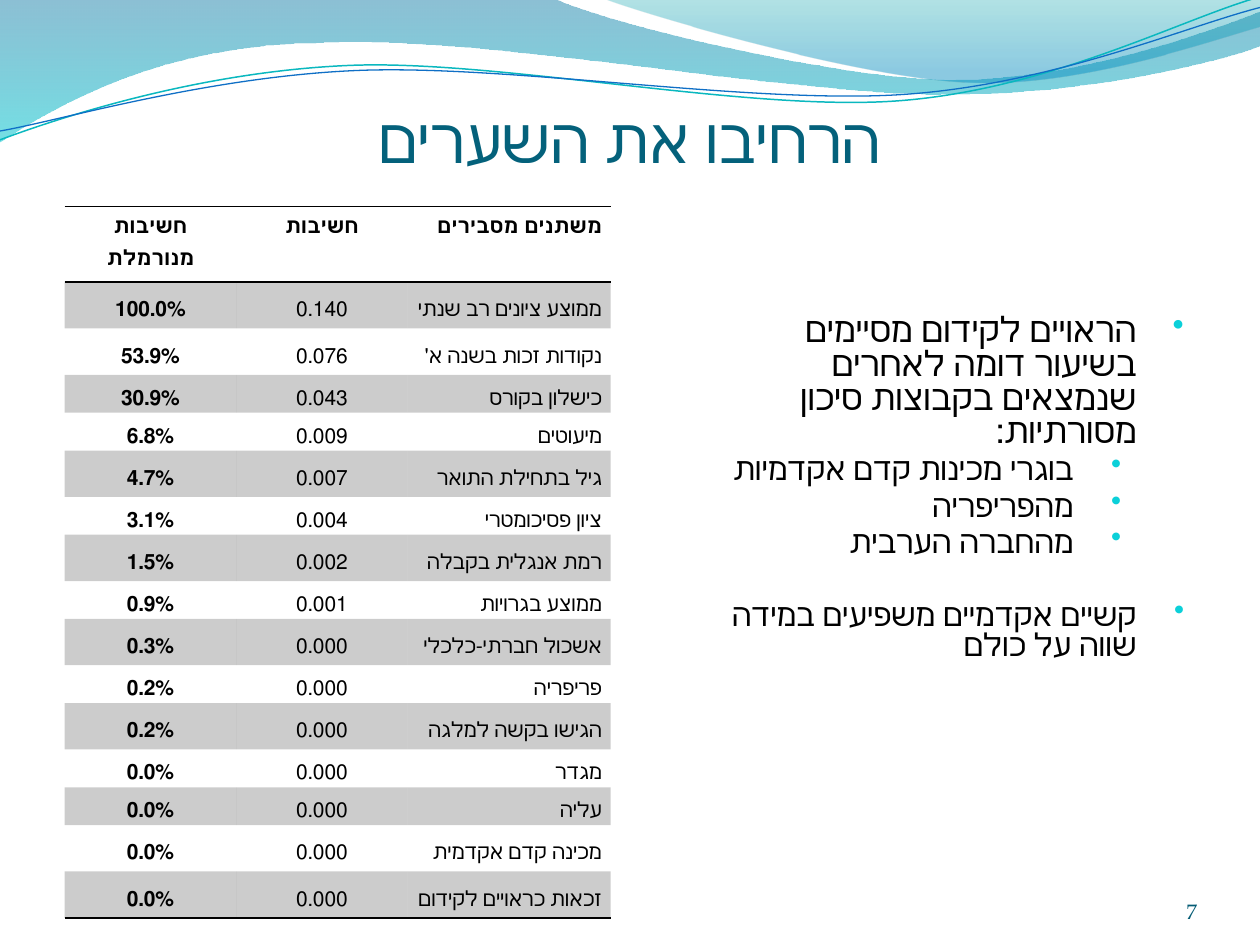
from dataclasses import dataclass
from math import cos, radians, sin

from lxml.etree import SubElement
from pptx import Presentation
from pptx.dml.color import RGBColor
from pptx.enum.lang import MSO_LANGUAGE_ID
from pptx.enum.text import MSO_ANCHOR, PP_ALIGN
from pptx.oxml.ns import qn
from pptx.util import Pt


@dataclass(frozen=True)
class Theme:
    """Colours, fonts and type sizes of the slide."""
    ink: str = "000000"
    title: str = "04617B"
    number: str = "045C75"
    bullet: str = "0BD0D9"
    teal_line: str = "0AB8BF"
    blue_line: str = "0F6FC6"
    body_font: str = "Arial"
    title_font: str = "Calibri"
    number_font: str = "TeX Gyre Pagella"
    title_size: int = 36
    lead_size: int = 20
    body_size: int = 18
    small_size: int = 12
    band_opacity: int = 20


THEME = Theme()
NO_STYLE = "{2D5ABB26-0587-4C30-8999-92F81FD0307C}"

BACK_WAVE = [
    [(0, -0.7)], [(316.8, -0.7)],
    [(342.7, 12.2), (478.1, 45.4), (545.8, 45.4)],
    [(614.2, 45.4), (689.8, 18.7), (720, 6.5)], [(720.7, 25.9)],
    [(707.8, 31.7), (626.4, 54.7), (537.1, 54)],
    [(447.8, 54), (275, 20.2), (185, 24.5)],
    [(92.2, 25.2), (33.1, 59.8), (-0.7, 81.4)],
]
FRONT_WAVE = [
    [(344.9, -0.7)],
    [(366.5, 7.9), (491, 44.6), (553.7, 46.8)],
    [(616.3, 49.7), (691.9, 23), (720, 15.1)], [(720, 0)],
]
TEAL_CURVE = [
    [(0, 79.9)],
    [(34.6, 67), (113.8, 41), (199.4, 37.4)],
    [(284.4, 33.8), (427, 64.1), (513.4, 57.6)],
    [(599.8, 51.1), (675.4, 10.8), (718.6, -1.4)],
]
BLUE_CURVE = [
    [(0, 74.9)],
    [(33.8, 69.1), (118.1, 43.9), (203.8, 40.3)],
    [(290.2, 36.7), (429.8, 59.8), (516.2, 54)],
    [(601.9, 48.2), (677.5, 15.1), (720, 4.3)],
]

HEADINGS = ("חשיבות מנורמלת", "חשיבות", "משתנים מסבירים")
TALL, SHORT = 26.5, 18
FACTORS = [
    ("100.0%", "0.140", "ממוצע ציונים רב שנתי", TALL),
    ("53.9%", "0.076", "נקודות זכות בשנה א'", TALL),
    ("30.9%", "0.043", "כישלון בקורס", SHORT),
    ("6.8%", "0.009", "מיעוטים", SHORT),
    ("4.7%", "0.007", "גיל בתחילת התואר", TALL),
    ("3.1%", "0.004", "ציון פסיכומטרי", SHORT),
    ("1.5%", "0.002", "רמת אנגלית בקבלה", TALL),
    ("0.9%", "0.001", "ממוצע בגרויות", SHORT),
    ("0.3%", "0.000", "אשכול חברתי-כלכלי", TALL),
    ("0.2%", "0.000", "פריפריה", SHORT),
    ("0.2%", "0.000", "הגישו בקשה למלגה", TALL),
    ("0.0%", "0.000", "מגדר", SHORT),
    ("0.0%", "0.000", "עליה", SHORT),
    ("0.0%", "0.000", "מכינה קדם אקדמית", TALL),
    ("0.0%", "0.000", "זכאות כראויים לקידום", TALL),
]
POINTS = [
    ("הראויים לקידום מסיימים בשיעור דומה לאחרים שנמצאים בקבוצות סיכון מסורתיות:",
     0, THEME.lead_size, 0),
    ("בוגרי מכינות קדם אקדמיות", 1, THEME.body_size, 3.5),
    ("מהפריפריה", 1, THEME.body_size, 3.5),
    ("מהחברה הערבית", 1, THEME.body_size, 3.5),
    ("קשיים אקדמיים משפיעים במידה שווה על כולם", 0, THEME.body_size, 24.5),
]


def rgb(value):
    """Turn a hex string into a colour."""
    return RGBColor.from_string(value)


def set_opacity(parent, percent):
    """Make every colour below an element partly transparent."""
    for color in parent.iter(qn("a:srgbClr")):
        SubElement(color, qn("a:alpha"), val=str(percent * 1000))


def add_outline(slide, segments, close):
    """Draw a freeform whose three-point segments are cubic curves."""
    start, *rest = [(Pt(x), Pt(y)) for segment in segments for x, y in segment]
    builder = slide.shapes.build_freeform(*start)
    builder.add_line_segments(rest, close=close)
    shape = builder.convert_to_shape()
    shape.shadow.inherit = False
    lines = iter(list(shape.element.spPr.iter(qn("a:lnTo"))))
    for segment in segments[1:]:
        first, *others = [next(lines) for _ in segment]
        if others:
            first.tag = qn("a:cubicBezTo")
        for line in others:
            first.append(line[0])
            line.getparent().remove(line)
    return shape


def add_wave(slide, segments, stops):
    """Add a wave filled from top to bottom with translucent colours."""
    shape = add_outline(slide, segments, True)
    shape.line.fill.background()
    shape.fill.gradient()
    shape.fill.gradient_angle = 270
    elements = shape.element.spPr.iter(qn("a:gs"))
    for stop, element, (position, color, opacity) in zip(shape.fill.gradient_stops, elements, stops):
        stop.color.rgb = rgb(color)
        element.set("pos", str(position * 1000))
        set_opacity(element, opacity)


def add_curve(slide, segments, center, color, width, tilt=2.7):
    """Add a thin curve as a level outline turned by the tilt."""
    turn, (middle_x, middle_y) = radians(tilt), center
    level = [[(middle_x + (x - middle_x) * cos(turn) - (y - middle_y) * sin(turn),
               middle_y + (x - middle_x) * sin(turn) + (y - middle_y) * cos(turn))
              for x, y in segment] for segment in segments]
    shape = add_outline(slide, level, False)
    shape.rotation = 360 - tilt
    shape.fill.background()
    shape.line.color.rgb = rgb(color)
    shape.line.width = Pt(width)


def style_para(para, font, size, color, align, bold=False):
    """Set alignment, language and type for a paragraph."""
    para.alignment = align
    para.font.size = Pt(size)
    para.font.bold = bold
    para.font.color.rgb = rgb(color)
    para.font.name = font
    para.font.language_id = MSO_LANGUAGE_ID.HEBREW


def add_box(slide, left, top, width, height):
    """Add a wrapping text box and return its frame."""
    frame = slide.shapes.add_textbox(Pt(left), Pt(top), Pt(width), Pt(height)).text_frame
    frame.word_wrap = True
    return frame


def add_title(slide, text):
    """Add the centred title."""
    para = add_box(slide, 36, 54, 648, 64).paragraphs[0]
    para.text = text
    style_para(para, THEME.title_font, THEME.title_size, THEME.title, PP_ALIGN.CENTER)


def add_number(slide, text):
    """Add the slide number."""
    frame = add_box(slide, 516, 492, 168, 36)
    frame.margin_left = frame.margin_right = frame.margin_top = frame.margin_bottom = 0
    frame.vertical_anchor = MSO_ANCHOR.BOTTOM
    para = frame.paragraphs[0]
    para.text = text
    style_para(para, THEME.number_font, THEME.small_size, THEME.number, PP_ALIGN.RIGHT)


def add_bullets(slide):
    """Add the right-to-left bullet list."""
    frame = add_box(slide, 391, 177, 293, 318)
    for index, (text, level, size, gap) in enumerate(POINTS):
        para = frame.add_paragraph() if index else frame.paragraphs[0]
        para.text, para.level, para.line_spacing = text, level, 0.8
        para.space_before = Pt(gap)
        properties = para._p.get_or_add_pPr()
        for name, value in (("marL", Pt(27.4 + 36 * level)), ("indent", Pt(-27.4)), ("rtl", 1)):
            properties.set(name, str(int(value)))
        SubElement(SubElement(properties, qn("a:buClr")), qn("a:srgbClr"), val=THEME.bullet)
        SubElement(properties, qn("a:buSzPct"), val="95000")
        SubElement(properties, qn("a:buChar"), char="•")
        style_para(para, THEME.body_font, size, THEME.ink, PP_ALIGN.RIGHT)


def fill_cell(cell, text, align, bold, edges, banded):
    """Write one table cell with its borders and band."""
    cell.margin_left = 0 if align == PP_ALIGN.RIGHT else Pt(5)
    cell.margin_right = Pt(5)
    cell.margin_top = cell.margin_bottom = 0
    properties = cell._tc.get_or_add_tcPr()
    for edge in edges:
        line = SubElement(properties, qn(f"a:{edge}"), w=str(Pt(1)))
        SubElement(SubElement(line, qn("a:solidFill")), qn("a:srgbClr"), val=THEME.ink)
    if banded:
        cell.fill.solid()
        cell.fill.fore_color.rgb = rgb(THEME.ink)
        set_opacity(properties.find(qn("a:solidFill")), THEME.band_opacity)
    else:
        cell.fill.background()
    para = cell.text_frame.paragraphs[0]
    para.text, para.line_spacing = text, 1.5
    para._p.get_or_add_pPr().set("rtl", "1")
    style_para(para, THEME.body_font, THEME.small_size, THEME.ink, align, bold)


def add_factor_table(slide):
    """Add the table of explanatory variables."""
    rows = [(*HEADINGS, TALL), *FACTORS]
    table = slide.shapes.add_table(len(rows), 3, Pt(37), Pt(118), Pt(312), Pt(388)).table
    table.first_row = table.horz_banding = False
    table._tbl.tblPr.find(qn("a:tableStyleId")).text = NO_STYLE
    for column, width in zip(table.columns, (98, 98, 116)):
        column.width = Pt(width)
    for index, (*texts, height) in enumerate(rows):
        table.rows[index].height = Pt(height)
        edges = {0: ("lnT", "lnB"), len(rows) - 1: ("lnB",)}.get(index, ())
        for place, text in enumerate(texts):
            cell = table.cell(index, place)
            align = PP_ALIGN.RIGHT if place == 2 else PP_ALIGN.CENTER
            fill_cell(cell, text, align, index == 0 or place == 0, edges, index % 2 == 1)
            if index:
                cell.vertical_anchor = MSO_ANCHOR.MIDDLE


def main():
    """Build and save the slide."""
    deck = Presentation()
    deck.slide_width, deck.slide_height = Pt(720), Pt(540)
    slide = deck.slides.add_slide(deck.slide_layouts[6])
    add_wave(slide, BACK_WAVE, [(0, "0074A1", 45), (100, "00C6CF", 55)])
    add_wave(slide, FRONT_WAVE, [(0, "00A1A9", 30), (80, "008BBF", 45)])
    add_curve(slide, TEAL_CURVE, (359.3, 41.4), THEME.teal_line, 0.85)
    add_curve(slide, BLUE_CURVE, (359.6, 42.5), THEME.blue_line, 0.75)
    add_number(slide, "7")
    add_title(slide, "הרחיבו את השערים")
    add_bullets(slide)
    add_factor_table(slide)
    deck.save("out.pptx")


if __name__ == "__main__":
    main()
